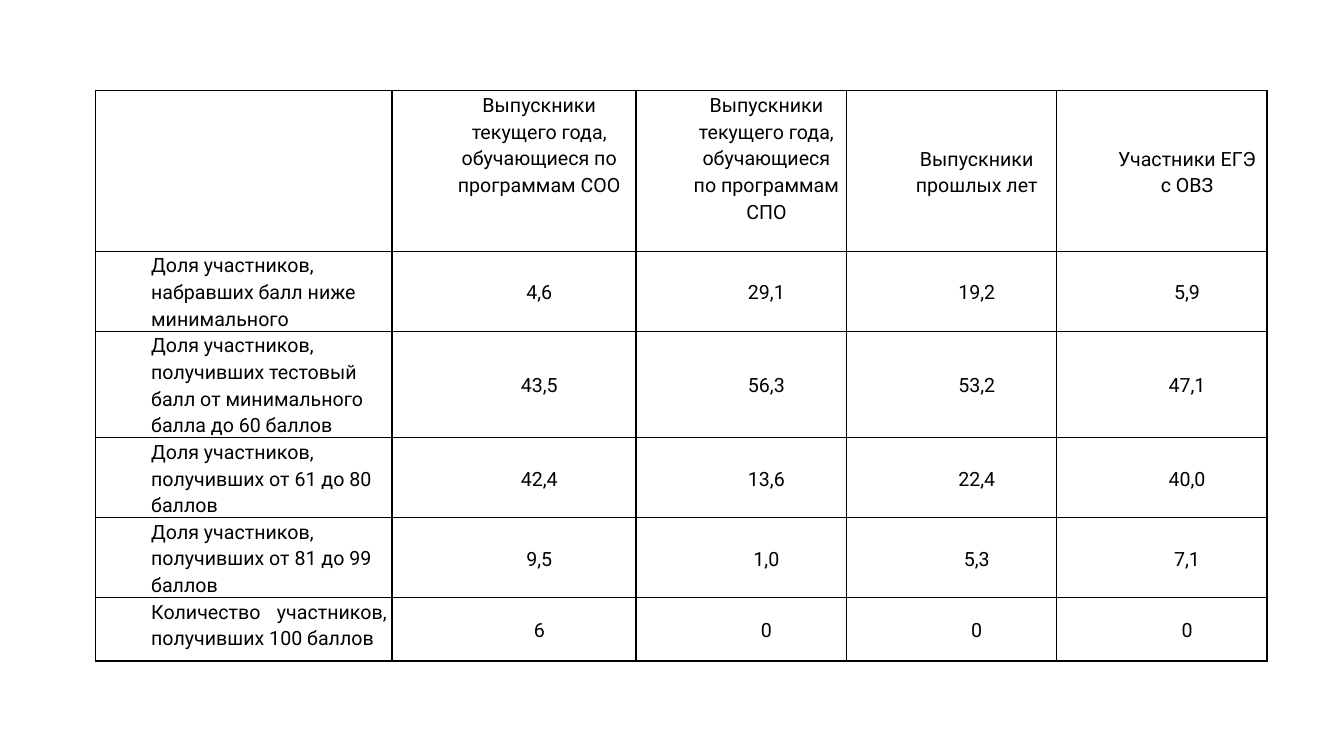
from lxml.etree import SubElement
from pptx import Presentation
from pptx.dml.color import RGBColor
from pptx.enum.text import MSO_ANCHOR, PP_ALIGN
from pptx.oxml.ns import qn
from pptx.util import Cm, Pt

COLORS = {"ink": "000000"}
COL_WIDTHS = [7.47, 6.15, 5.3, 5.3, 5.3]
ROW_HEIGHTS = [4.04, 2.01, 2.68, 2.01, 2.01, 1.6]
ROWS = [
    ["", "Выпускники текущего года, обучающиеся по программам СОО",
     "Выпускники текущего года, обучающиеся по программам СПО",
     "Выпускники прошлых лет", "Участники ЕГЭ с ОВЗ"],
    ["Доля участников, набравших балл ниже минимального",
     "4,6", "29,1", "19,2", "5,9"],
    ["Доля участников, получивших тестовый балл от минимального балла до 60 баллов",
     "43,5", "56,3", "53,2", "47,1"],
    ["Доля участников, получивших от 61 до 80 баллов",
     "42,4", "13,6", "22,4", "40,0"],
    ["Доля участников, получивших от 81 до 99 баллов",
     "9,5", "1,0", "5,3", "7,1"],
    ["Количество участников, получивших 100 баллов", "6", "0", "0", "0"],
]


class Deck:
    font = "Roboto"
    size = Pt(14)
    border = Pt(1)

    def __init__(self):
        self.prs = Presentation()
        self.prs.slide_width, self.prs.slide_height = Cm(33.87), Cm(19.05)
        self.s = self.prs.slides.add_slide(self.prs.slide_layouts[6])

    def table(self, left, top, widths, heights, rows):
        frame = self.s.shapes.add_table(
            len(rows), len(widths), Cm(left), Cm(top),
            Cm(sum(widths)), Cm(sum(heights)))
        tbl = frame.table
        tbl.first_row = tbl.horz_banding = False
        for col, width in zip(tbl.columns, widths):
            col.width = Cm(width)
        for row, height in zip(tbl.rows, heights):
            row.height = Cm(height)
        for i, row in enumerate(rows):
            for j, text in enumerate(row):
                cell = tbl.cell(i, j)
                self.borders(cell)
                cell.fill.background()
                if text:
                    align = PP_ALIGN.CENTER if j else PP_ALIGN.LEFT
                    if j == 0 and i == len(rows) - 1:
                        align = PP_ALIGN.JUSTIFY
                    top_anchored = j == 0 or (i == 0 and j < 3)
                    self.cell_text(cell, text, align, top_anchored)

    def borders(self, cell):
        tcPr = cell._tc.get_or_add_tcPr()
        for side in ("L", "R", "T", "B"):
            ln = SubElement(tcPr, qn(f"a:ln{side}"), w=str(self.border))
            fill = SubElement(ln, qn("a:solidFill"))
            SubElement(fill, qn("a:srgbClr"), val=COLORS["ink"])

    def cell_text(self, cell, text, align, top_anchored):
        cell.margin_left = cell.margin_right = Cm(0.13)
        cell.margin_top = cell.margin_bottom = 0
        cell.vertical_anchor = MSO_ANCHOR.TOP if top_anchored else MSO_ANCHOR.MIDDLE
        p = cell.text_frame.paragraphs[0]
        p.alignment = align
        p.line_spacing = 1.15
        pPr = p._p.get_or_add_pPr()
        pPr.set("marL", str(Cm(1.27)))
        pPr.set("indent", "0")
        r = p.add_run()
        r.text = text
        r.font.name = self.font
        r.font.size = self.size
        r.font.color.rgb = RGBColor.from_string(COLORS["ink"])


def main():
    deck = Deck()
    deck.table(2.41, 2.29, COL_WIDTHS, ROW_HEIGHTS, ROWS)
    deck.prs.save("out.pptx")


if __name__ == "__main__":
    main()
